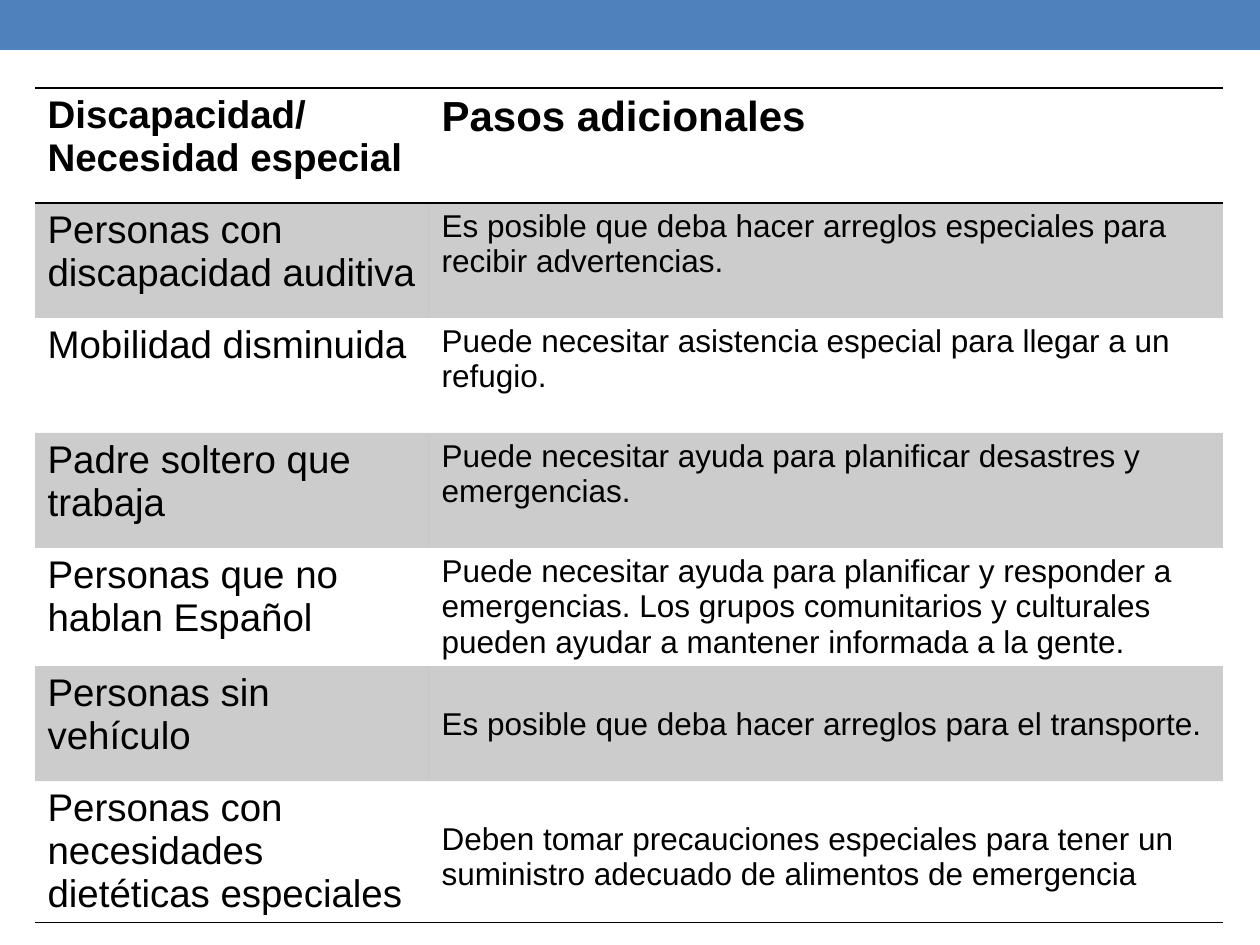
from dataclasses import dataclass

import pptx
import pptx.dml.color
import pptx.enum.shapes
import pptx.oxml
import pptx.oxml.ns
import pptx.util
from lxml import etree

PX = 914400 // 126  # EMU in one px
NO_STYLE = "{2D5ABB26-0587-4C30-8999-92F81FD0307C}"
BLACK, BLUE = "000000", "4F81BD"
MARGIN_TOP = 6
LINE_18PT = 35


@dataclass
class Row:
    need: str
    steps: str
    need_size: int = 22
    steps_size: int = 18
    bold: bool = False
    shaded: bool = False
    borders: tuple[str, ...] = ()
    steps_drop: int = 0  # px the right-hand text starts lower


ROWS = [
    Row("Discapacidad/\nNecesidad especial", "Pasos adicionales",
        steps_size=24, bold=True, borders=("T", "B")),
    Row("Personas con discapacidad auditiva",
        "Es posible que deba hacer arreglos especiales para recibir advertencias.",
        shaded=True),
    Row("Mobilidad disminuida",
        "Puede necesitar asistencia especial para llegar a un refugio."),
    Row("Padre soltero que trabaja",
        "Puede necesitar ayuda para planificar desastres y emergencias.",
        shaded=True),
    Row("Personas que no hablan Español",
        "Puede necesitar ayuda para planificar y responder a emergencias. "
        "Los grupos comunitarios y culturales pueden ayudar a mantener "
        "informada a la gente."),
    Row("Personas sin vehículo",
        "Es posible que deba hacer arreglos para el transporte.",
        shaded=True, steps_drop=LINE_18PT),
    Row("Personas con necesidades dietéticas especiales",
        "Deben tomar precauciones especiales para tener un suministro "
        "adecuado de alimentos de emergencia",
        borders=("B",), steps_drop=LINE_18PT),
]


def px(n: int) -> int:
    return pptx.util.Emu(n * PX)


def rgb(color: str) -> pptx.dml.color.RGBColor:
    return pptx.dml.color.RGBColor.from_string(color)


def add_border(cell, side: str) -> None:
    line = pptx.oxml.parse_xml(
        f'<a:ln{side} {pptx.oxml.ns.nsdecls("a")} w="12700"><a:solidFill>'
        f'<a:srgbClr val="{BLACK}"/></a:solidFill></a:ln{side}>')
    cell._tc.get_or_add_tcPr().append(line)


def shade(cell, color: str, alpha: int) -> None:
    cell.fill.solid()
    cell.fill.fore_color.rgb = rgb(color)
    clr = cell._tc.tcPr.find(".//" + pptx.oxml.ns.qn("a:srgbClr"))
    etree.SubElement(clr, pptx.oxml.ns.qn("a:alpha"), val=str(alpha * 1000))


def fill_cell(cell, text: str, size: int, row: Row, drop: int = 0) -> None:
    cell.margin_top = px(MARGIN_TOP + drop)
    cell.text_frame.text = text
    for p in cell.text_frame.paragraphs:
        for r in p.runs:
            r.font.name = "Arial"
            r.font.size = pptx.util.Pt(size)
            r.font.bold = row.bold
            r.font.color.rgb = rgb(BLACK)
    for side in row.borders:
        add_border(cell, side)
    if row.shaded:
        shade(cell, BLACK, 20)
    else:
        cell.fill.background()


def add_needs_table(s, rows: list[Row]) -> None:
    widths, row_height = (394, 794), 115
    frame = s.shapes.add_table(len(rows), len(widths), px(35), px(88),
                               px(sum(widths)), px(row_height * len(rows)))
    table = frame.table
    table.first_row = table.horz_banding = False
    table._tbl.tblPr.find(pptx.oxml.ns.qn("a:tableStyleId")).text = NO_STYLE
    for column, width in zip(table.columns, widths):
        column.width = px(width)
    for i, row in enumerate(rows):
        table.rows[i].height = px(row_height)
        fill_cell(table.cell(i, 0), row.need, row.need_size, row)
        fill_cell(table.cell(i, 1), row.steps, row.steps_size, row, row.steps_drop)


def main() -> None:
    prs = pptx.Presentation()
    prs.slide_width, prs.slide_height = px(1260), px(945)
    s = prs.slides.add_slide(prs.slide_layouts[6])

    # Band across the top
    band = s.shapes.add_shape(pptx.enum.shapes.MSO_SHAPE.RECTANGLE,
                              0, 0, prs.slide_width, px(50))
    band.shadow.inherit = False
    band.fill.solid()
    band.fill.fore_color.rgb = rgb(BLUE)
    band.line.fill.background()

    # Special needs and the extra steps for each
    add_needs_table(s, ROWS)

    prs.save("out.pptx")


if __name__ == "__main__":
    main()
